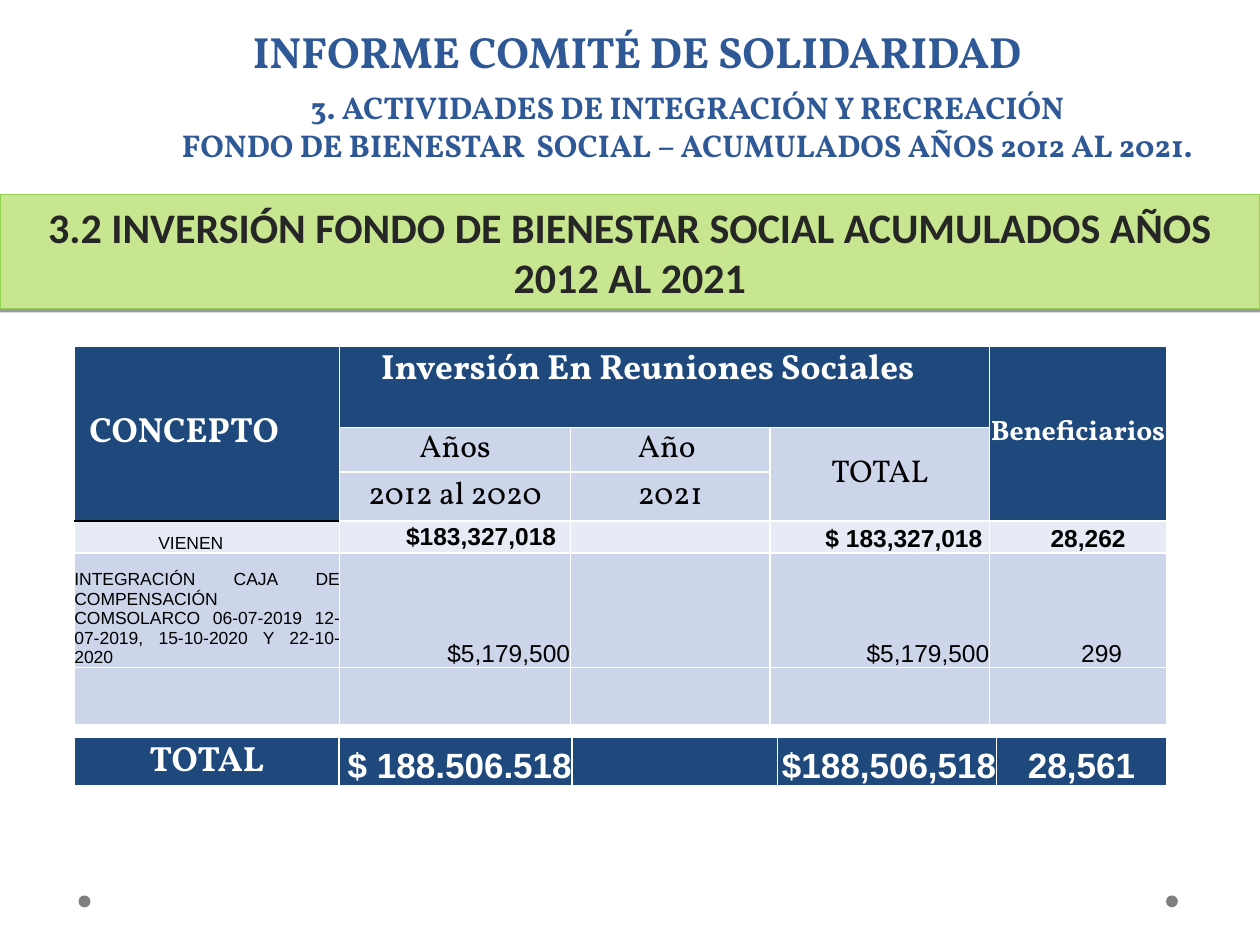
from dataclasses import dataclass
from typing import Optional

from lxml.etree import SubElement
from pptx import Presentation
from pptx.dml.color import RGBColor
from pptx.enum.shapes import MSO_SHAPE as Shape
from pptx.enum.text import MSO_ANCHOR as Anchor, PP_ALIGN as Align
from pptx.oxml import parse_xml
from pptx.oxml.ns import nsdecls, qn
from pptx.util import Pt

WHITE = RGBColor(0xFF, 0xFF, 0xFF)
BLACK = RGBColor(0, 0, 0)
NAVY = RGBColor(0x1F, 0x49, 0x7D)
BLUE = RGBColor(0x2F, 0x58, 0x97)
PALE = RGBColor(0xCC, 0xD5, 0xEA)
PALER = RGBColor(0xE7, 0xEB, 0xF5)
LIME = RGBColor(0xC7, 0xE6, 0x8F)
GREEN = RGBColor(0x92, 0xD0, 0x50)
DARK = RGBColor(0x26, 0x26, 0x26)
GREY = RGBColor(0x7F, 0x7F, 0x7F)
SERIF, SANS, BANNER_FONT = "Vollkorn", "Arial", "Calibri"


@dataclass(frozen=True)
class Style:
    size: float
    font: str
    color: RGBColor
    bold: bool = False


@dataclass(frozen=True)
class Cell:
    row: int
    col: int
    text: str
    style: Style
    align: Align = Align.CENTER
    anchor: Anchor = Anchor.MIDDLE
    left: float = 0
    right: float = 0
    rows: int = 1
    cols: int = 1
    fill: Optional[RGBColor] = None


HEAD = Style(20, SERIF, WHITE, True)
HEAD_SMALL = Style(16, SERIF, WHITE, True)
SUBHEAD = Style(18, SERIF, BLACK)
LABEL = Style(10, SANS, BLACK)
FIGURE = Style(14, SANS, BLACK)
FIGURE_BOLD = Style(14, SANS, BLACK, True)
GRAND = Style(20, SANS, WHITE, True)

MAIN_CELLS = [
    Cell(0, 0, "CONCEPTO", HEAD, Align.LEFT, left=8.6, rows=3),
    Cell(0, 1, "Inversión En Reuniones Sociales", HEAD, anchor=Anchor.TOP, right=19, cols=3),
    Cell(0, 4, "Beneficiarios", HEAD_SMALL, rows=3),
    Cell(1, 1, "Años", SUBHEAD, fill=PALE),
    Cell(1, 2, "Año", SUBHEAD, right=4, fill=PALE),
    Cell(1, 3, "TOTAL", SUBHEAD, rows=2, fill=PALE),
    Cell(2, 1, "2012 al 2020", SUBHEAD, fill=PALE),
    Cell(2, 2, "2021", SUBHEAD, fill=PALE),
    Cell(3, 0, "VIENEN", LABEL, Align.LEFT, Anchor.BOTTOM, left=48),
    Cell(3, 1, "$183,327,018", FIGURE_BOLD, Align.RIGHT, right=8),
    Cell(3, 3, "$ 183,327,018", FIGURE_BOLD, Align.RIGHT, Anchor.BOTTOM, right=4),
    Cell(3, 4, "28,262", FIGURE_BOLD, anchor=Anchor.BOTTOM, left=11.6),
    Cell(4, 0, "INTEGRACIÓN CAJA DE COMPENSACIÓN COMSOLARCO 06-07-2019 "
         "12-07-2019, 15-10-2020 Y 22-10-2020", LABEL, Align.JUSTIFY, Anchor.BOTTOM),
    Cell(4, 1, "$5,179,500", FIGURE, Align.RIGHT, Anchor.BOTTOM),
    Cell(4, 3, "$5,179,500", FIGURE, Align.RIGHT, Anchor.BOTTOM),
    Cell(4, 4, "299", FIGURE, anchor=Anchor.BOTTOM, left=27),
]
TOTAL_CELLS = [
    Cell(0, 0, "TOTAL", HEAD),
    Cell(0, 1, "$ 188.506.518", GRAND, Align.RIGHT, Anchor.BOTTOM),
    Cell(0, 3, "$188,506,518", GRAND, Align.RIGHT, Anchor.BOTTOM),
    Cell(0, 4, "28,561", GRAND, anchor=Anchor.BOTTOM),
]


def add_run(p, text: str, style: Style) -> None:
    r = p.add_run()
    r.text = text
    r.font.size, r.font.name, r.font.bold = Pt(style.size), style.font, style.bold
    r.font.color.rgb = style.color


def add_lines(tf, lines: list[str], style: Style) -> None:
    tf.word_wrap = True
    for i, line in enumerate(lines):
        p = tf.add_paragraph() if i else tf.paragraphs[0]
        p.alignment = Align.CENTER
        add_run(p, line, style)


def set_border(cell, side: str, color: RGBColor, width: float = 1) -> None:
    """Draw one side (L, R, T or B) of a cell, replacing an earlier line."""
    tc_pr = cell._tc.get_or_add_tcPr()
    old = tc_pr.find(qn(f"a:ln{side}"))
    if old is not None:
        tc_pr.remove(old)
    ln = parse_xml(f'<a:ln{side} {nsdecls("a")} w="{Pt(width)}"><a:solidFill>'
                   f'<a:srgbClr val="{color}"/></a:solidFill></a:ln{side}>')
    tc_pr.insert("LRTB".index(side), ln)


def add_table(s, left: float, top: float, widths: list[float], heights: list[float],
              fills: list[RGBColor], cells: list[Cell]):
    table = s.shapes.add_table(len(heights), len(widths), Pt(left), Pt(top),
                               Pt(sum(widths)), Pt(sum(heights))).table
    table.first_row = table.horz_banding = False
    for col, width in zip(table.columns, widths):
        col.width = Pt(width)
    for row, height, fill in zip(table.rows, heights, fills):
        row.height = Pt(height)
        for tc in row.cells:
            tc.margin_left = tc.margin_right = tc.margin_top = tc.margin_bottom = 0
            tc.fill.solid()
            tc.fill.fore_color.rgb = fill
            for side in "LRTB":
                set_border(tc, side, WHITE)
    for c in cells:
        tc = table.cell(c.row, c.col)
        if c.rows * c.cols > 1:
            tc.merge(table.cell(c.row + c.rows - 1, c.col + c.cols - 1))
        tc.margin_left, tc.margin_right = Pt(c.left), Pt(c.right)
        tc.vertical_anchor = c.anchor
        if c.fill is not None:
            tc.fill.fore_color.rgb = c.fill
        p = tc.text_frame.paragraphs[0]
        p.alignment = c.align
        add_run(p, c.text, c.style)
    for tc in table.iter_cells():
        if not tc.text_frame.text:  # keeps empty cells from stretching their row
            SubElement(tc.text_frame.paragraphs[0]._p, qn("a:endParaRPr"), sz="1000")
    return table


def add_shape(s, kind: Shape, left: float, top: float, width: float, height: float,
              fill: RGBColor):
    sp = s.shapes.add_shape(kind, Pt(left), Pt(top), Pt(width), Pt(height))
    sp.shadow.inherit = False
    sp.fill.solid()
    sp.fill.fore_color.rgb = fill
    sp.line.fill.background()
    return sp


def add_drop_shadow(sp) -> None:
    effects = sp._element.spPr.find(qn("a:effectLst"))
    effects.append(parse_xml(
        f'<a:outerShdw {nsdecls("a")} blurRad="0" dist="{Pt(1.6)}" dir="5400000" '
        'rotWithShape="0"><a:srgbClr val="000000"><a:alpha val="38000"/></a:srgbClr>'
        '</a:outerShdw>'))


def main() -> None:
    prs = Presentation()
    prs.slide_width, prs.slide_height = Pt(720), Pt(540)
    s = prs.slides.add_slide(prs.slide_layouts[6])

    for left in (44.9, 666.3):
        add_shape(s, Shape.OVAL, left, 511.7, 6.8, 6.8, GREY)

    tf = s.shapes.add_textbox(Pt(42.5), Pt(4.3), Pt(643), Pt(43.2)).text_frame
    tf.vertical_anchor = Anchor.BOTTOM
    add_lines(tf, ["INFORME COMITÉ DE SOLIDARIDAD"], Style(25, SERIF, BLUE, True))
    tf.paragraphs[0].line_spacing = Pt(58)

    # The last column is just wide enough for its header word on one line.
    table = add_table(s, 42.5, 197.6, [151.6, 131.8, 114.2, 125.4, 101.2],
                      [46.8, 25.2, 28, 18.5, 65.5, 32.6],
                      [NAVY, NAVY, NAVY, PALER, PALE, PALE], MAIN_CELLS)
    for row, side in ((0, "B"), (2, "B"), (3, "T")):
        set_border(table.cell(row, 0), side, BLACK)
    add_table(s, 42.5, 421.5, [151.2, 133.2, 117.4, 125.2, 97.2], [27.5],
              [NAVY], TOTAL_CELLS)

    tf = s.shapes.add_textbox(Pt(70.6), Pt(46.8), Pt(644.4), Pt(51)).text_frame
    add_lines(tf, ["3. ACTIVIDADES DE INTEGRACIÓN Y RECREACIÓN",
                   "FONDO DE BIENESTAR  SOCIAL – ACUMULADOS AÑOS 2012 AL 2021."],
              Style(18, SERIF, BLUE, True))

    banner = add_shape(s, Shape.RECTANGLE, 0, 111, 720, 65.5, LIME)
    banner.line.color.rgb, banner.line.width = GREEN, Pt(0.75)
    add_drop_shadow(banner)
    add_lines(banner.text_frame,
              ["3.2 INVERSIÓN FONDO DE BIENESTAR SOCIAL ACUMULADOS AÑOS 2012 AL 2021"],
              Style(24, BANNER_FONT, DARK, True))
    prs.save("out.pptx")


if __name__ == "__main__":
    main()
